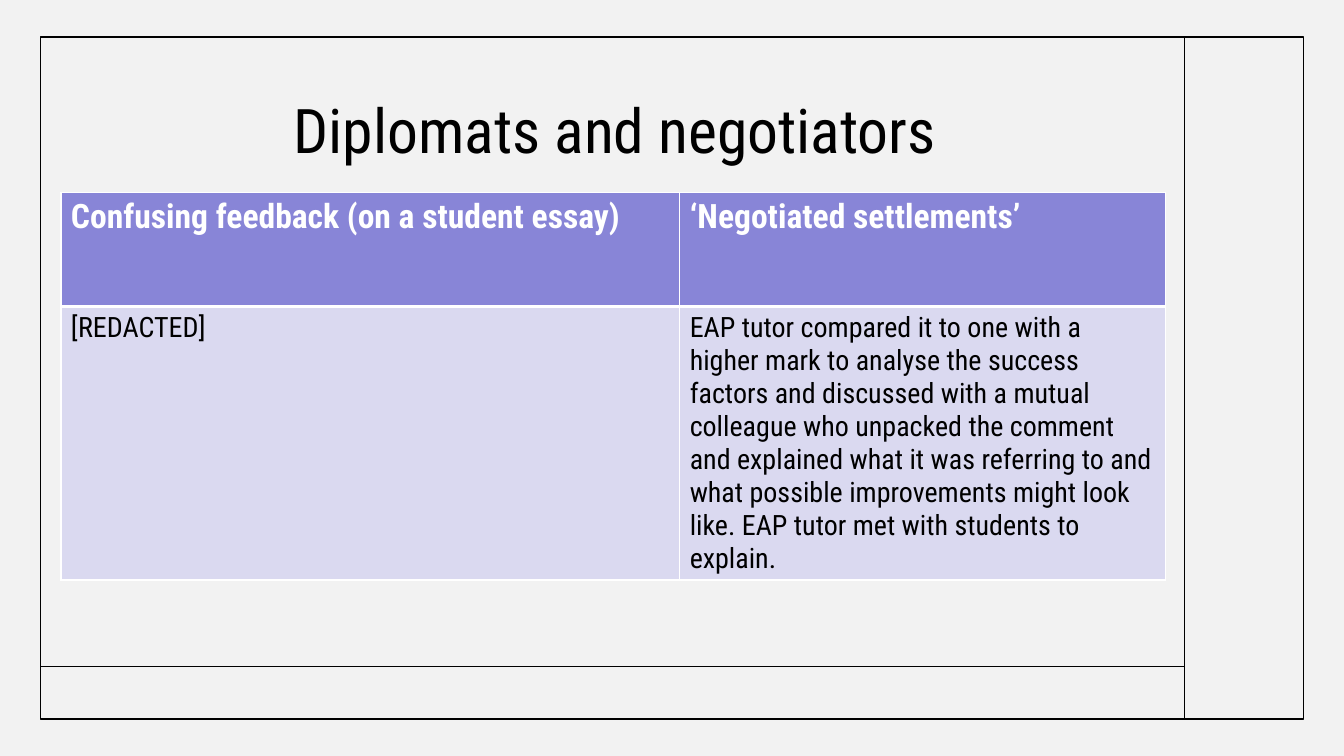
from lxml.etree import SubElement
from pptx import Presentation
from pptx.dml.color import RGBColor
from pptx.enum.shapes import MSO_CONNECTOR, MSO_SHAPE
from pptx.enum.text import MSO_ANCHOR, PP_ALIGN
from pptx.oxml.ns import qn
from pptx.util import Pt

FONT = "Roboto Condensed"
COLORS = {
    "back": "F2F2F2",
    "ink": "000000",
    "white": "FFFFFF",
    "head": "8885D7",
    "body": "DAD9F0",
}
LEFT, TOP, RIGHT, BASE = 29, 26.5, 931, 513.5
SPLIT, FLOOR = 846, 476
COLS = [442, 347]
ROWS = [81.4, 195]
TEXTS = [
    ["Confusing feedback (on a student essay)", "‘Negotiated settlements’"],
    ["[REDACTED]",
     "EAP tutor compared it to one with a higher mark to analyse the success "
     "factors and discussed with a mutual colleague who unpacked the comment "
     "and explained what it was referring to and what possible improvements "
     "might look like. EAP tutor met with students to explain."],
]


def color(name):
    return RGBColor.from_string(COLORS[name])


def set_font(para, size, name, bold=False):
    font = para.font
    font.name, font.size, font.bold = FONT, Pt(size), bold
    font.color.rgb = color(name)


def set_line(line):
    line.color.rgb = color("ink")
    line.width = Pt(1)


def add_frame(slide):
    frame = slide.shapes.add_shape(
        MSO_SHAPE.RECTANGLE, Pt(LEFT), Pt(TOP), Pt(RIGHT - LEFT), Pt(BASE - TOP))
    frame.shadow.inherit = False
    frame.fill.background()
    set_line(frame.line)


def add_rule(slide, *ends):
    rule = slide.shapes.add_connector(
        MSO_CONNECTOR.STRAIGHT, *[Pt(end) for end in ends])
    set_line(rule.line)
    SubElement(rule._element.spPr, qn("a:effectLst"))


def set_title(slide, text):
    title = slide.shapes.title
    title.left, title.top = Pt(66), Pt(43)
    title.width, title.height = Pt(747), Pt(104.5)
    title.text_frame.text = text
    title.text_frame.vertical_anchor = MSO_ANCHOR.MIDDLE
    para = title.text_frame.paragraphs[0]
    para.alignment = PP_ALIGN.CENTER
    para.line_spacing = 0.9
    set_font(para, 44, "ink")


def set_edges(cell, top, bottom):
    """Give a cell white borders, with the top and bottom widths in points."""
    props = cell._tc.get_or_add_tcPr()
    for side, width in zip("LRTB", (1, 1, top, bottom)):
        edge = SubElement(props, qn(f"a:ln{side}"), w=str(Pt(width)))
        fill = SubElement(edge, qn("a:solidFill"))
        SubElement(fill, qn("a:srgbClr"), val=COLORS["white"])


def add_grid(slide):
    table = slide.shapes.add_table(
        len(ROWS), len(COLS), Pt(43.5), Pt(137.5),
        Pt(sum(COLS)), Pt(sum(ROWS))).table
    for col, width in zip(table.columns, COLS):
        col.width = Pt(width)
    looks = [("head", 24, "white", True, 1, 3), ("body", 20, "ink", False, 3, 1)]
    for row, height, texts, look in zip(table.rows, ROWS, TEXTS, looks):
        row.height = Pt(height)
        fill, size, ink, bold, top, bottom = look
        for cell, text in zip(row.cells, texts):
            cell.text = text
            set_font(cell.text_frame.paragraphs[0], size, ink, bold)
            set_edges(cell, top, bottom)
            cell.fill.solid()
            cell.fill.fore_color.rgb = color(fill)


def main():
    deck = Presentation()
    deck.slide_width, deck.slide_height = Pt(960), Pt(540)
    slide = deck.slides.add_slide(deck.slide_layouts.get_by_name("Title Only"))
    slide.background.fill.solid()
    slide.background.fill.fore_color.rgb = color("back")
    add_frame(slide)
    add_rule(slide, SPLIT, TOP, SPLIT, BASE)
    add_rule(slide, LEFT, FLOOR, SPLIT, FLOOR)
    set_title(slide, "Diplomats and negotiators")
    add_grid(slide)
    deck.save("out.pptx")


if __name__ == "__main__":
    main()
